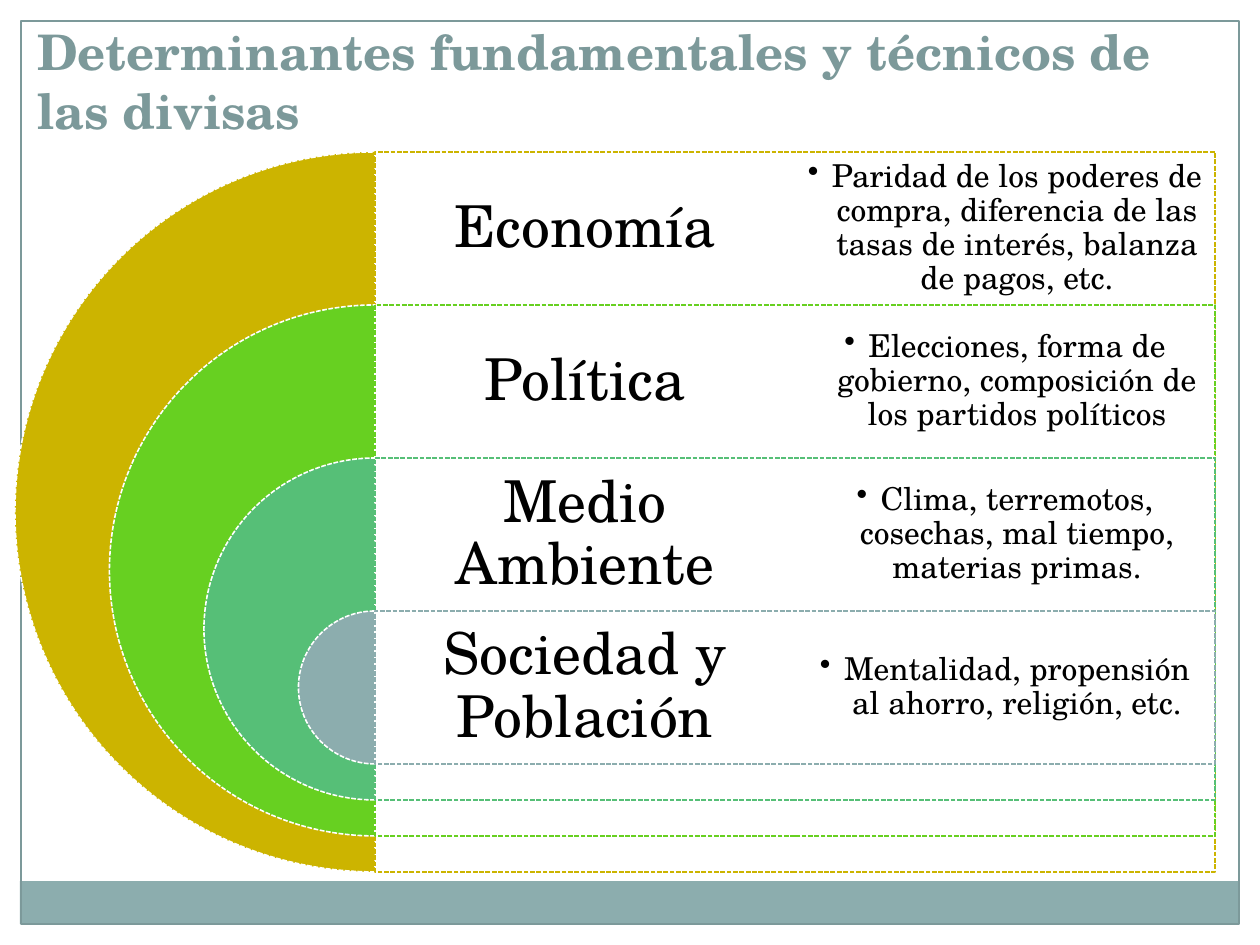
import dataclasses
import pptx
import pptx.util
import pptx.dml.color
import pptx.enum.dml
import pptx.enum.shapes
import pptx.enum.text
import pptx.oxml
import pptx.oxml.ns

KIND = pptx.enum.shapes.MSO_SHAPE
ALIGN = pptx.enum.text.PP_ALIGN
ANCHOR = pptx.enum.text.MSO_ANCHOR
SCALE = 914400 / 126


@dataclasses.dataclass(frozen=True)
class Theme:
    font: str = "TeX Gyre Schola"
    title: str = "7C999A"
    base: str = "8CADAE"
    white: str = "FFFFFF"
    ink: str = "000000"
    rings: tuple = ("CCB400", "67D021", "56BF77", "8CADAE")
    head: int = 28
    label: int = 33
    note: int = 18
    thin: float = 0.75
    dash: float = 0.9


THEME = Theme()
ROWS = (
    ("Economía", "Paridad de los poderes de compra, diferencia de las "
     "tasas de interés, balanza de pagos, etc."),
    ("Política", "Elecciones, forma de gobierno, composición de los "
     "partidos políticos"),
    ("Medio Ambiente", "Clima, terremotos, cosechas, mal tiempo, "
     "materias primas."),
    ("Sociedad y Población", "Mentalidad, propensión al ahorro, "
     "religión, etc."),
)
TOP, ROW, STEP = 152, 153, 189
AXIS, HALF = 375, 420


def px(num):
    return round(num * SCALE)


def rgb(code):
    return pptx.dml.color.RGBColor.from_string(code)


def add_shape(slide, kind, box, fill=None, line=None, width=0, dash=False):
    shape = slide.shapes.add_shape(kind, *map(px, box))
    shape.shadow.inherit = False
    if fill:
        shape.fill.solid()
        shape.fill.fore_color.rgb = rgb(fill)
    else:
        shape.fill.background()
    if line:
        shape.line.color.rgb = rgb(line)
        shape.line.width = pptx.util.Pt(width)
    else:
        shape.line.fill.background()
    if dash:
        shape.line.dash_style = pptx.enum.dml.MSO_LINE.SQUARE_DOT
    return shape


def set_alpha(shape, share):
    color = shape._element.spPr.find(
        pptx.oxml.ns.qn("a:solidFill")).find(pptx.oxml.ns.qn("a:srgbClr"))
    color.append(pptx.oxml.parse_xml(
        f'<a:alpha {pptx.oxml.ns.nsdecls("a")} val="{share * 1000}"/>'))


def add_text(slide, box, text, size, color, inset, anchor=ANCHOR.MIDDLE,
             align=ALIGN.CENTER, bold=False, space=0.9):
    frame = slide.shapes.add_textbox(*map(px, box)).text_frame
    frame.word_wrap = True
    frame.vertical_anchor = anchor
    frame.margin_left = frame.margin_right = px(inset[0])
    frame.margin_top = frame.margin_bottom = px(inset[1])
    para = frame.paragraphs[0]
    para.text = text
    para.alignment = align
    para.line_spacing = space
    para.font.name = THEME.font
    para.font.size = pptx.util.Pt(size)
    para.font.bold = bold
    para.font.color.rgb = rgb(color)
    return para


def add_bullet(para, indent):
    props = para._p.get_or_add_pPr()
    props.set("marL", str(px(indent)))
    props.set("indent", str(-px(indent)))
    mark = pptx.oxml.parse_xml(
        f'<a:buChar {pptx.oxml.ns.nsdecls("a")} char="•"/>')
    props.find(pptx.oxml.ns.qn("a:defRPr")).addprevious(mark)


def add_ring(slide, index, label):
    color = THEME.rings[index]
    top = TOP + index * ROW
    size = ROW + (len(ROWS) - 1 - index) * STEP
    pie = add_shape(slide, KIND.PIE, (AXIS - size / 2, top, size, size),
                    color, THEME.white, THEME.dash, True)
    pie.adjustments[0] = 54
    pie.adjustments[1] = 162
    panel = add_shape(slide, KIND.RECTANGLE, (AXIS, top, 2 * HALF, size),
                      THEME.white, color, THEME.dash, True)
    set_alpha(panel, 90)
    add_text(slide, (AXIS, top, HALF, ROW), label, THEME.label, THEME.ink,
             (18, 18))


def add_note(slide, index, note):
    box = (AXIS + HALF, TOP + index * ROW, HALF, ROW)
    para = add_text(slide, box, note, THEME.note, THEME.ink, (9, 9))
    add_bullet(para, 24)


def main():
    deck = pptx.Presentation()
    deck.slide_width, deck.slide_height = px(1260), px(945)
    slide = deck.slides.add_slide(deck.slide_layouts[6])
    add_shape(slide, KIND.RECTANGLE, (20, 881, 1218, 43), THEME.base)
    add_shape(slide, KIND.RECTANGLE, (21, 21, 1218, 903), None,
              THEME.title, THEME.thin)
    add_text(slide, (25, 16, 1203, 129),
             "Determinantes fundamentales y técnicos de las divisas",
             THEME.head, THEME.title, (12, 6), ANCHOR.BOTTOM, ALIGN.LEFT,
             True, 1.0)
    for index, (label, _) in enumerate(ROWS):
        add_ring(slide, index, label)
    for index, (_, note) in enumerate(ROWS):
        add_note(slide, index, note)
    deck.save("out.pptx")


if __name__ == "__main__":
    main()
